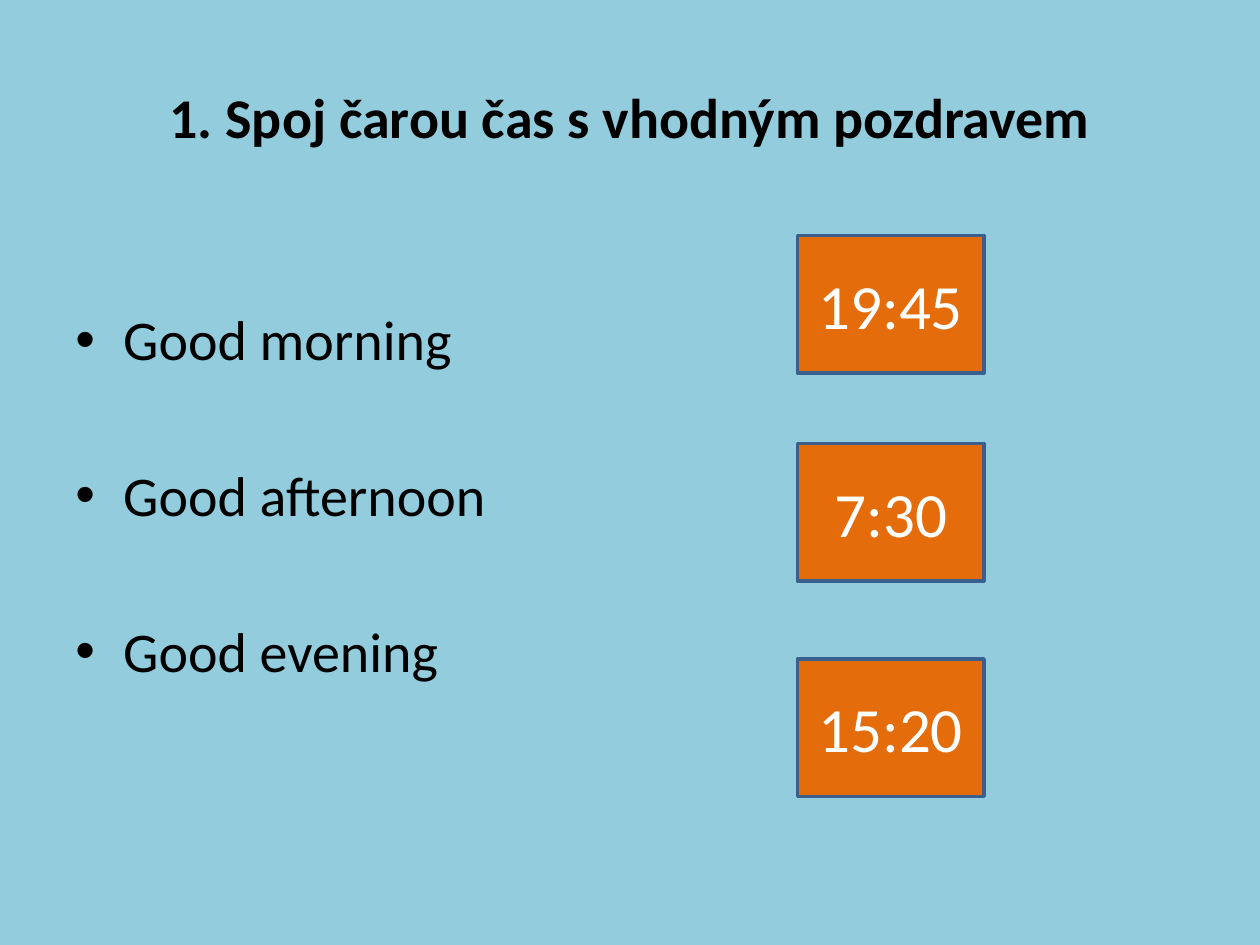
from dataclasses import dataclass

from lxml.etree import SubElement
from pptx import Presentation
from pptx.dml.color import RGBColor
from pptx.enum.shapes import MSO_SHAPE
from pptx.enum.text import MSO_ANCHOR, PP_ALIGN
from pptx.oxml.ns import qn
from pptx.util import Inches, Pt


@dataclass(frozen=True)
class Theme:
    font: str = "Calibri"
    background: str = "93CDDD"
    text: str = "000000"
    card: str = "E46C0A"
    card_line: str = "3A5F8C"
    card_text: str = "FFFFFF"
    body_size: int = 32
    time_size: int = 36


THEME = Theme()


def rgb(value):
    return RGBColor.from_string(value)


def style(p, size, color, bold=False):
    for r in p.runs:
        r.font.name = THEME.font
        r.font.size = Pt(size)
        r.font.bold = bold
        r.font.color.rgb = rgb(color)


def add_text_frame(s, left, top, width, height):
    tf = s.shapes.add_textbox(
        Inches(left), Inches(top), Inches(width), Inches(height)).text_frame
    tf.word_wrap = True
    return tf


def add_bullet(p, indent):
    pPr = p._p.get_or_add_pPr()
    pPr.set("marL", str(Inches(indent)))
    pPr.set("indent", str(-Inches(indent)))
    SubElement(pPr, qn("a:buFont"), typeface="Arial")
    SubElement(pPr, qn("a:buChar"), char="•")


def add_title(s, text, left, top, width, height):
    tf = add_text_frame(s, left, top, width, height)
    tf.vertical_anchor = MSO_ANCHOR.MIDDLE
    p = tf.paragraphs[0]
    p.text = text
    p.alignment = PP_ALIGN.CENTER
    style(p, THEME.body_size, THEME.text, bold=True)


def add_greetings(s, greetings, left, top, width, height):
    tf = add_text_frame(s, left, top, width, height)
    tf.margin_top = Inches(0.67)
    tf.text = "\n".join(greetings)
    for i, p in enumerate(tf.paragraphs):
        p.space_before = Pt(50.5 if i else 0)
        add_bullet(p, 0.38)
        style(p, THEME.body_size, THEME.text)


def add_times(s, times, left, top, width, height):
    for text, offset in times:
        sp = s.shapes.add_shape(
            MSO_SHAPE.RECTANGLE, Inches(left), Inches(top + offset),
            Inches(width), Inches(height))
        sp.shadow.inherit = False
        sp.fill.solid()
        sp.fill.fore_color.rgb = rgb(THEME.card)
        sp.line.color.rgb = rgb(THEME.card_line)
        sp.line.width = Pt(2)
        tf = sp.text_frame
        tf.vertical_anchor = MSO_ANCHOR.MIDDLE
        p = tf.paragraphs[0]
        p.text = text
        p.alignment = PP_ALIGN.CENTER
        style(p, THEME.time_size, THEME.card_text)


def main():
    prs = Presentation()
    prs.slide_width, prs.slide_height = Inches(10), Inches(7.5)
    s = prs.slides.add_slide(prs.slide_layouts[6])
    s.background.fill.solid()
    s.background.fill.fore_color.rgb = rgb(THEME.background)

    # Heading
    add_title(s, "1. Spoj čarou čas s vhodným pozdravem", 0.5, 0.3, 9, 1.25)
    # Greetings to match
    add_greetings(s, ["Good morning", "Good afternoon", "Good evening"],
                  0.5, 1.75, 9, 4.95)
    # Time cards, each with its offset from the first
    add_times(s, [("19:45", 0), ("7:30", 1.65), ("15:20", 3.36)],
              6.33, 1.87, 1.48, 1.09)

    prs.save("out.pptx")


if __name__ == "__main__":
    main()
